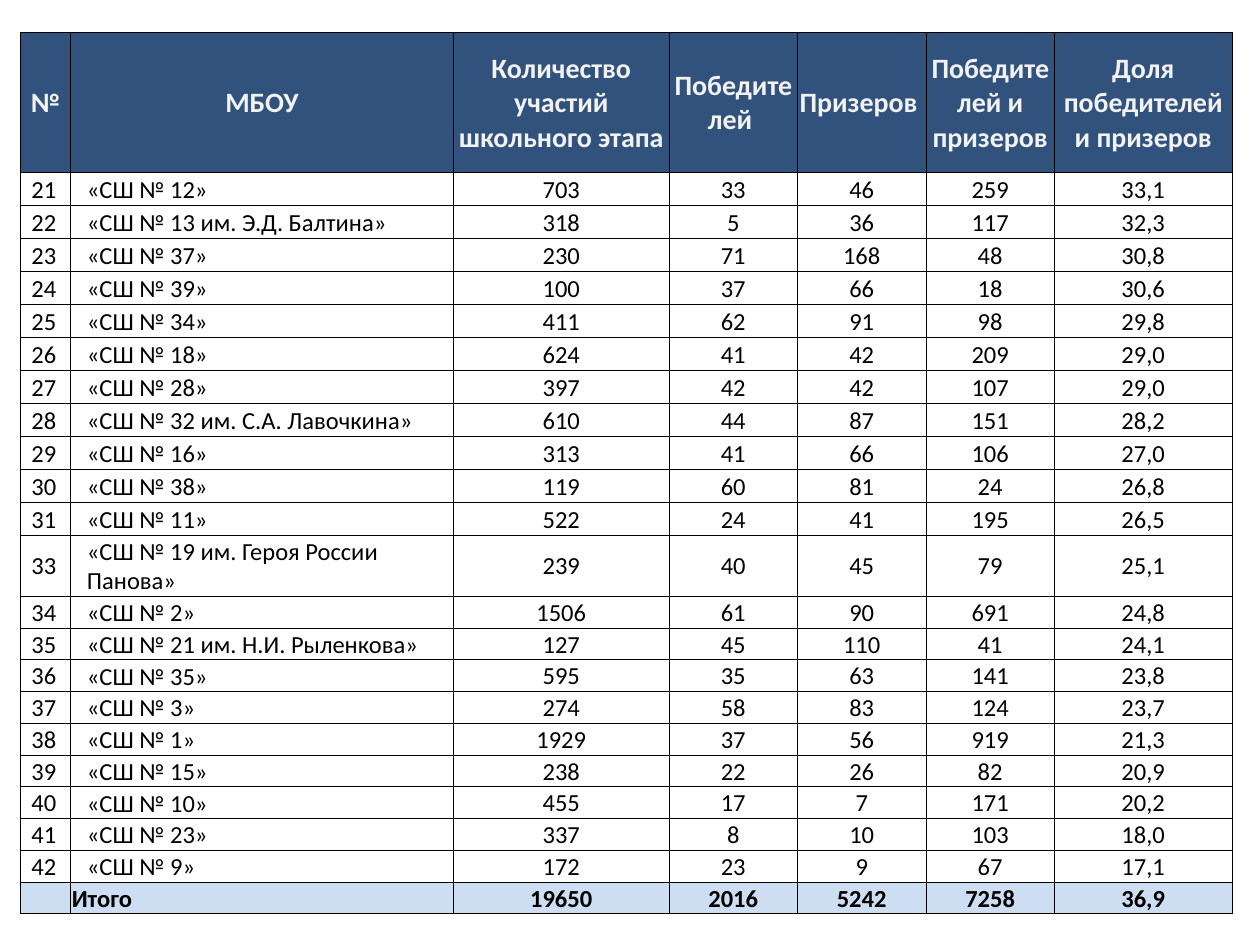
from lxml import etree
from pptx import Presentation, util as u
from pptx.dml.color import RGBColor
from pptx.enum import text
from pptx.oxml.ns import qn

HEADERS = ["№", "МБОУ", "Количество участий школьного этапа", "Победителей ",
           "Призеров ", "Победителей и призеров", "Доля победителей и призеров"]
SCHOOLS = [
    ("21", "«СШ № 12»", "703", "33", "46", "259", "33,1"),
    ("22", "«СШ № 13 им. Э.Д. Балтина»", "318", "5", "36", "117", "32,3"),
    ("23", "«СШ № 37»", "230", "71", "168", "48", "30,8"),
    ("24", "«СШ № 39»", "100", "37", "66", "18", "30,6"),
    ("25", "«СШ № 34»", "411", "62", "91", "98", "29,8"),
    ("26", "«СШ № 18»", "624", "41", "42", "209", "29,0"),
    ("27", "«СШ № 28»", "397", "42", "42", "107", "29,0"),
    ("28", "«СШ № 32 им. С.А. Лавочкина»", "610", "44", "87", "151", "28,2"),
    ("29", "«СШ № 16»", "313", "41", "66", "106", "27,0"),
    ("30", "«СШ № 38»", "119", "60", "81", "24", "26,8"),
    ("31", "«СШ № 11»", "522", "24", "41", "195", "26,5"),
    ("33", "«СШ № 19 им. Героя России Панова»", "239", "40", "45", "79", "25,1"),
    ("34", "«СШ № 2»", "1506", "61", "90", "691", "24,8"),
    ("35", "«СШ № 21 им. Н.И. Рыленкова»", "127", "45", "110", "41", "24,1"),
    ("36", "«СШ № 35»", "595", "35", "63", "141", "23,8"),
    ("37", "«СШ № 3»", "274", "58", "83", "124", "23,7"),
    ("38", "«СШ № 1»", "1929", "37", "56", "919", "21,3"),
    ("39", "«СШ № 15»", "238", "22", "26", "82", "20,9"),
    ("40", "«СШ № 10»", "455", "17", "7", "171", "20,2"),
    ("41", "«СШ № 23»", "337", "8", "10", "103", "18,0"),
    ("42", "«СШ № 9»", "172", "23", "9", "67", "17,1"),
]
TOTAL = ("", "Итого", "19650", "2016", "5242", "7258", "36,9")

THEME = {
    "font": "Calibri", "border": "000000", "border_width": u.Pt(0.5),
    "header": {"size": 16, "bold": True, "color": "F2F2F2", "fill": "30527D"},
    "school": {"size": 14, "bold": False, "color": "000000", "fill": None},
    "total": {"size": 14, "bold": True, "color": "000000", "fill": "CDDDF2"},
}
LEFT, TOP = 0.16, 0.26
COLUMN_WIDTHS = [0.4, 3.04, 1.71, 1.02, 1.02, 1.02, 1.41]
ROW_BANDS = [(1, 1.11), (11, 2.88), (1, 0.48), (10, 2.52)]  # rows, shared height
MARGINS = {"margin_left": 0.01, "margin_top": 0.01, "margin_right": 0.01, "margin_bottom": 0}
INDENTS = {0: 0.08, 1: 0.12}
FIRST_BOTTOM_NAME = 12  # school names sit at the cell bottom from this row on


def add_borders(cell):
    properties = cell._tc.get_or_add_tcPr()
    for side in ("lnL", "lnR", "lnT", "lnB"):
        line = etree.SubElement(properties, qn("a:" + side), w=str(THEME["border_width"]))
        fill = etree.SubElement(line, qn("a:solidFill"))
        etree.SubElement(fill, qn("a:srgbClr"), val=THEME["border"])


def fill_cell(cell, words, style, align, anchor, indent):
    add_borders(cell)
    if style["fill"]:
        cell.fill.solid()
        cell.fill.fore_color.rgb = RGBColor.from_string(style["fill"])
    else:
        cell.fill.background()
    for name, inches in MARGINS.items():
        setattr(cell, name, u.Inches(inches))
    cell.vertical_anchor = anchor
    para = cell.text_frame.paragraphs[0]
    para.alignment = align
    if indent:
        para._p.get_or_add_pPr().set("marL", str(u.Inches(indent)))
    if not words:  # an empty cell still needs its type size to keep the row low
        etree.SubElement(para._p, qn("a:endParaRPr"), sz=str(style["size"] * 100))
        return
    span = para.add_run()
    span.text = words
    formats = {"name": THEME["font"], "size": u.Pt(style["size"]), "bold": style["bold"]}
    for name, value in formats.items():
        setattr(span.font, name, value)
    span.font.color.rgb = RGBColor.from_string(style["color"])


def cell_layout(kind, row, column):
    """Return alignment, anchor and left indent of one cell."""
    left = kind != "header" and column < 2
    align = text.PP_ALIGN.LEFT if left else text.PP_ALIGN.CENTER
    low = kind == "total" or (kind == "school" and column == 1 and row >= FIRST_BOTTOM_NAME)
    anchor = text.MSO_ANCHOR.BOTTOM if low else text.MSO_ANCHOR.MIDDLE
    return align, anchor, INDENTS.get(column) if kind == "school" else None


def main():
    deck = Presentation()
    deck.slide_width, deck.slide_height = u.Inches(10), u.Inches(7.5)
    page = deck.slides.add_slide(deck.slide_layouts[6])
    rows = [("header", HEADERS), *(("school", school) for school in SCHOOLS), ("total", TOTAL)]
    heights = [band / count for count, band in ROW_BANDS for _ in range(count)]
    table = page.shapes.add_table(
        len(rows), len(HEADERS), u.Inches(LEFT), u.Inches(TOP),
        u.Inches(sum(COLUMN_WIDTHS)), u.Inches(sum(heights))).table
    table.first_row = table.horz_banding = False
    for column, width in zip(table.columns, COLUMN_WIDTHS):
        column.width = u.Inches(width)
    for r, (kind, values) in enumerate(rows):
        table.rows[r].height = u.Inches(heights[r])
        for c, words in enumerate(values):
            fill_cell(table.cell(r, c), words, THEME[kind], *cell_layout(kind, r, c))
    deck.save("out.pptx")


if __name__ == "__main__":
    main()
